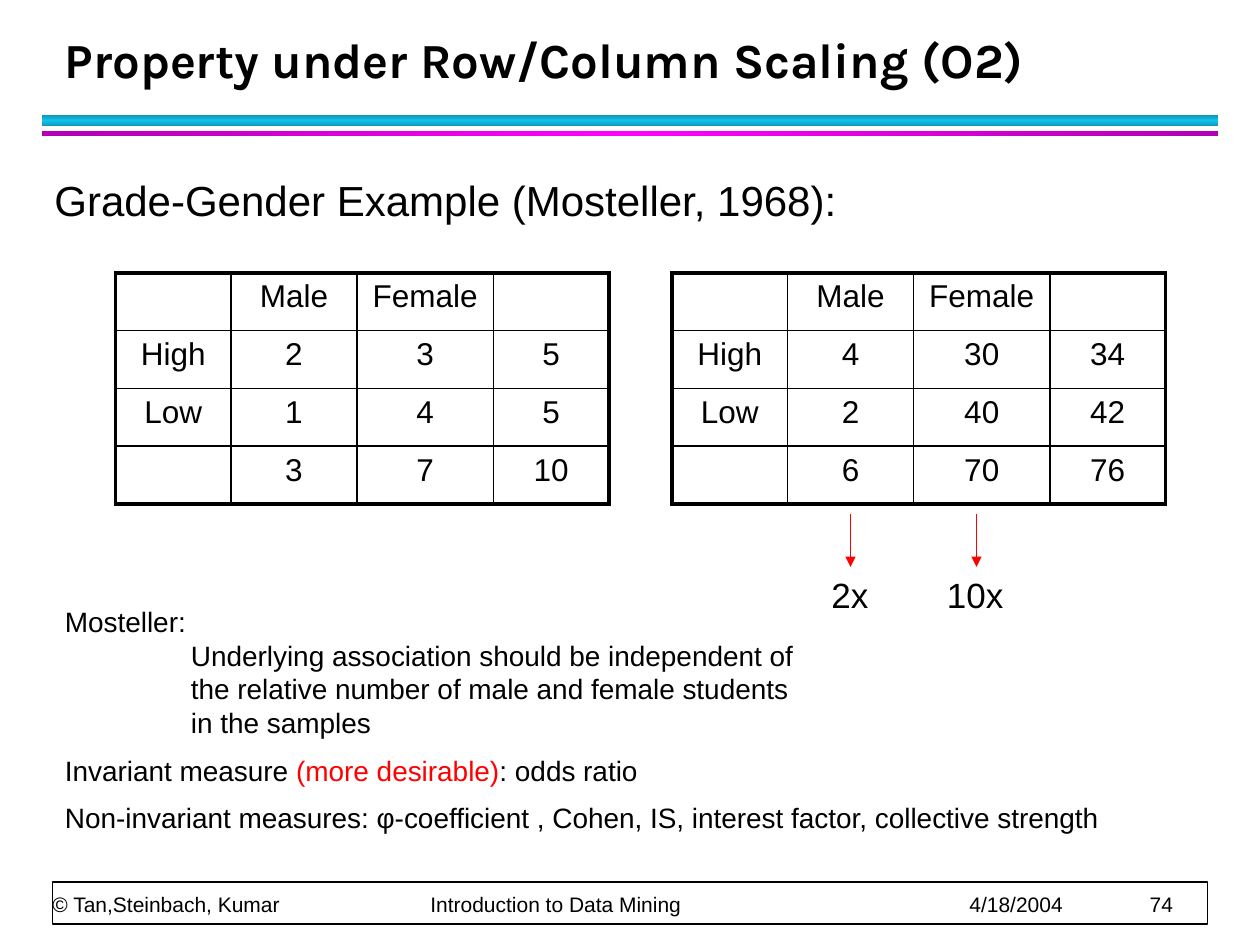
from dataclasses import dataclass

from lxml import etree
from pptx import Presentation
from pptx.dml.color import RGBColor
from pptx.enum import shapes, text
from pptx.oxml import ns
from pptx import util as u

COLOURS = {
    "black": "000000", "white": "FFFFFF", "red": "FF0000",
    "teal": "0E9BBA", "cyan": "12C2E9",
    "purple": "B200B2", "magenta": "FF00FF",
}
COLUMN_WIDTHS = (66, 72, 78, 66)
ROW_HEIGHT = 33


@dataclass
class Box:
    left: float
    top: float
    width: float
    height: float

    def lengths(self) -> list:
        return [u.Pt(v) for v in (self.left, self.top, self.width, self.height)]


@dataclass
class Band:
    box: Box
    edge: str
    middle: str
    angle: int


@dataclass
class Count:
    left: float
    rows: tuple


@dataclass
class Factor:
    label: str
    arrow_x: float
    label_left: float


@dataclass
class TextStyle:
    size: float
    name: str = "Arial"
    bold: bool = False


def rgb(name: str) -> RGBColor:
    return RGBColor.from_string(COLOURS[name])


def apply(target, values: dict) -> None:
    for name, value in values.items():
        setattr(target, name, value)


def add_node(parent, tag: str, **attributes):
    return etree.SubElement(parent, ns.qn(tag), {k: str(v) for k, v in attributes.items()})


def add_run(paragraph, content: str, style: TextStyle, colour: str = "black") -> None:
    """Add a run, with a line break at each newline."""
    for index, line in enumerate(content.split("\n")):
        if index:
            paragraph.add_line_break()
        run = paragraph.add_run()
        run.text = line
        apply(run.font, {"size": u.Pt(style.size), "name": style.name, "bold": style.bold})
        run.font.color.rgb = rgb(colour)


def add_text(slide, box: Box, paragraphs: list, style: TextStyle, frame_format=None,
             paragraph_format=None, tabs: tuple = ()) -> None:
    """Each paragraph is a list of (text, colour) pairs."""
    frame = slide.shapes.add_textbox(*box.lengths()).text_frame
    apply(frame, {"word_wrap": True, **(frame_format or {})})
    for index, runs in enumerate(paragraphs):
        paragraph = frame.add_paragraph() if index else frame.paragraphs[0]
        apply(paragraph, paragraph_format or {})
        if index:
            paragraph.space_before = u.Pt(style.size / 2)
        if tabs:
            tab_list = add_node(paragraph._p.get_or_add_pPr(), "a:tabLst")
            for position in tabs:
                add_node(tab_list, "a:tab", pos=int(u.Pt(position)), algn="l")
        for content, colour in runs:
            add_run(paragraph, content, style, colour)


def add_rectangle(slide, box: Box):
    shape = slide.shapes.add_shape(shapes.MSO_SHAPE.RECTANGLE, *box.lengths())
    shape.shadow.inherit = False
    return shape


def add_band(slide, band: Band) -> None:
    shape = add_rectangle(slide, band.box)
    shape.line.fill.background()
    shape.fill.gradient()
    gradient = shape._element.spPr.find(ns.qn("a:gradFill"))
    for child in list(gradient):
        gradient.remove(child)
    stops = add_node(gradient, "a:gsLst")
    for position, colour in ((0, band.edge), (50, band.middle), (100, band.edge)):
        stop = add_node(stops, "a:gs", pos=position * 1000)
        add_node(stop, "a:srgbClr", val=COLOURS[colour])
    add_node(gradient, "a:lin", ang=band.angle * 60000, scaled=0)


def add_border(cell, side: str, width: float) -> None:
    line = add_node(cell._tc.get_or_add_tcPr(), f"a:ln{side}", w=int(u.Pt(width)))
    add_node(add_node(line, "a:solidFill"), "a:srgbClr", val=COLOURS["black"])


def add_count_table(slide, count: Count) -> None:
    row_count, column_count = len(count.rows), len(COLUMN_WIDTHS)
    box = Box(count.left, 156, sum(COLUMN_WIDTHS), ROW_HEIGHT * row_count)
    table = slide.shapes.add_table(row_count, column_count, *box.lengths()).table
    apply(table, {"first_row": False, "horz_banding": False})
    for column, width in zip(table.columns, COLUMN_WIDTHS):
        column.width = u.Pt(width)
    for y, values in enumerate(count.rows):
        table.rows[y].height = u.Pt(ROW_HEIGHT)
        for x, value in enumerate(values):
            cell = table.cell(y, x)
            outer = {"L": x == 0, "R": x == column_count - 1,
                     "T": y == 0, "B": y == row_count - 1}
            for side, is_outer in outer.items():
                add_border(cell, side, 2.25 if is_outer else 1)
            cell.fill.background()
            if value:
                paragraph = cell.text_frame.paragraphs[0]
                apply(paragraph, {"alignment": text.PP_ALIGN.CENTER, "space_after": u.Pt(4)})
                add_run(paragraph, value, TextStyle(18))


def add_factor(slide, factor: Factor) -> None:
    arrow = slide.shapes.add_connector(
        shapes.MSO_CONNECTOR.STRAIGHT,
        *[u.Pt(v) for v in (factor.arrow_x, 294, factor.arrow_x, 324)])
    arrow.line.color.rgb = rgb("red")
    arrow.line.width = u.Pt(1)
    add_node(arrow.line._get_or_add_ln(), "a:tailEnd", type="triangle")
    add_node(arrow._element.spPr, "a:effectLst")
    add_text(slide, Box(factor.label_left, 324, 48, 31),
             [[(factor.label, "black")]], TextStyle(20))


def main() -> None:
    presentation = Presentation()
    apply(presentation, {"slide_width": u.Pt(720), "slide_height": u.Pt(540)})
    slide = presentation.slides.add_slide(presentation.slide_layouts[6])

    # Double rule under the title
    for band in (Band(Box(24, 66, 672, 6), "teal", "cyan", 90),
                 Band(Box(24, 75, 672, 3), "purple", "magenta", 0)):
        add_band(slide, band)

    # Footer
    footer = add_rectangle(slide, Box(30, 504, 660, 24))
    footer.fill.solid()
    footer.fill.fore_color.rgb = rgb("white")
    footer.line.color.rgb = rgb("black")
    footer.line.width = u.Pt(1)
    bottom = {"vertical_anchor": text.MSO_ANCHOR.BOTTOM}
    no_margins = dict.fromkeys(
        ("margin_left", "margin_top", "margin_right", "margin_bottom"), 0)
    add_text(slide, Box(30, 504, 659, 20),
             [[("© Tan,Steinbach, Kumar\tIntroduction to Data Mining\t4/18/2004\t74", "black")]],
             TextStyle(12), {**bottom, **no_margins}, {"line_spacing": u.Pt(20)},
             tabs=(216, 524, 627))

    # Title and heading
    add_text(slide, Box(30, 12, 652, 42),
             [[("Property under Row/Column Scaling (O2)", "black")]],
             TextStyle(28, "Karla", True), bottom, {"line_spacing": u.Pt(36)})
    add_text(slide, Box(24, 96, 606, 36),
             [[("Grade-Gender Example (Mosteller, 1968):", "black")]], TextStyle(24))

    # Counts before and after scaling
    header = ("", "Male", "Female", "")
    for count in (
        Count(66, (header, ("High", "2", "3", "5"), ("Low", "1", "4", "5"),
                   ("", "3", "7", "10"))),
        Count(384, (header, ("High", "4", "30", "34"), ("Low", "2", "40", "42"),
                    ("", "6", "70", "76"))),
    ):
        add_count_table(slide, count)

    # Conclusions
    add_text(slide, Box(30, 342, 660, 143), [
        [("Mosteller: \n\tUnderlying association should be independent of"
          "\n\tthe relative number of male and female students"
          "\n\tin the samples", "black")],
        [("Invariant measure", "black"), (" (more desirable)", "red"),
         (": odds ratio", "black")],
        [("Non-invariant measures: φ-coefficient , Cohen, IS, "
          "interest factor, collective strength", "black")],
    ], TextStyle(16), tabs=(72,))

    # Scaling factors under the second table
    for factor in (Factor("2x", 486, 468), Factor("10x", 558, 534)):
        add_factor(slide, factor)

    presentation.save("out.pptx")


if __name__ == "__main__":
    main()
